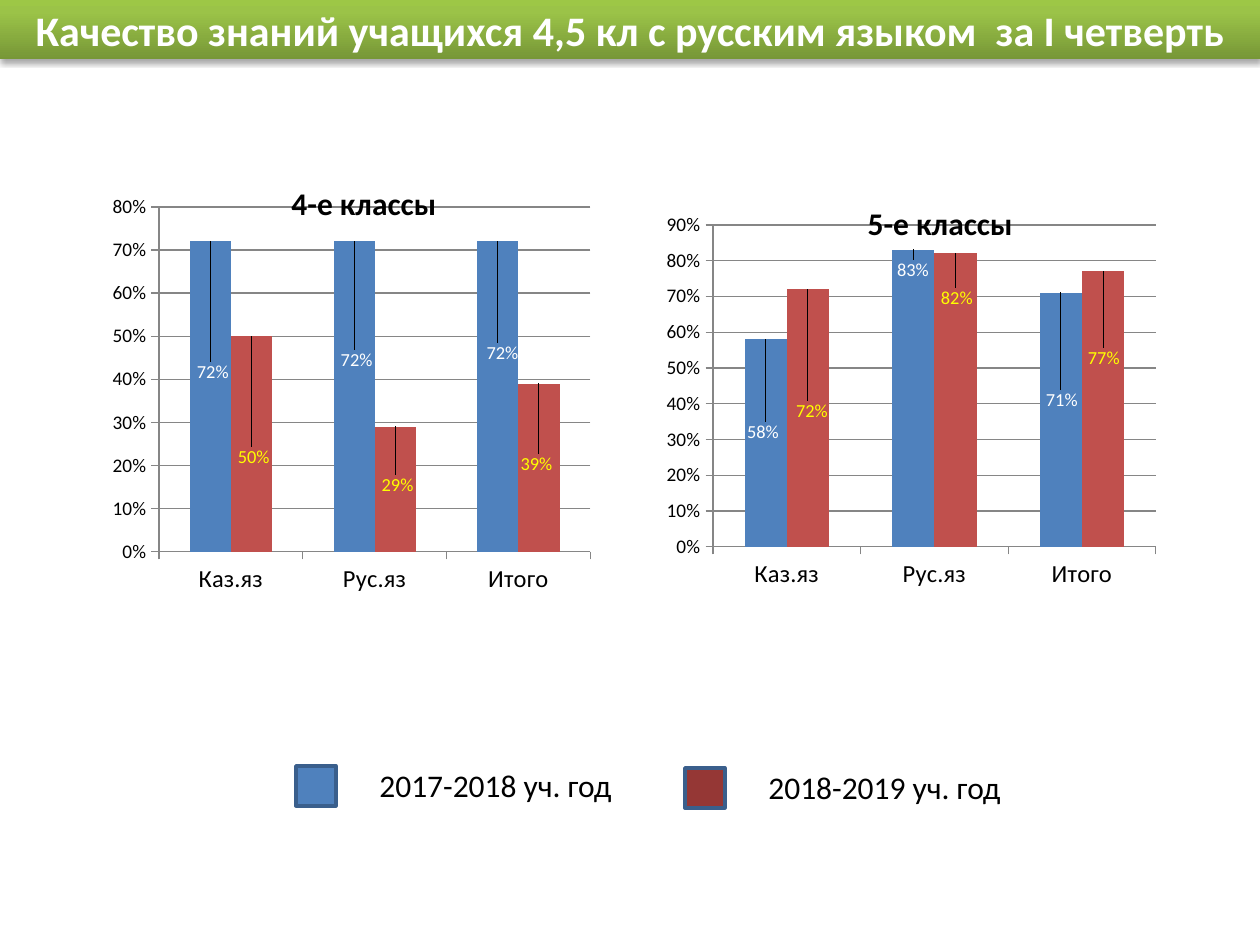
from dataclasses import dataclass

from lxml.etree import SubElement
from pptx import Presentation
from pptx.chart.data import CategoryChartData
from pptx.dml.color import RGBColor
from pptx.enum.chart import XL_CHART_TYPE as ChartType, XL_LABEL_POSITION as LabelPos
from pptx.enum.chart import XL_TICK_MARK as TickMark
from pptx.enum.shapes import MSO_SHAPE as Shape
from pptx.enum.text import MSO_ANCHOR as Anchor, MSO_AUTO_SIZE as AutoSize, PP_ALIGN as Align
from pptx.oxml import parse_xml
from pptx.oxml.ns import nsdecls, qn
from pptx.util import Emu, Pt

PX = 914400 // 126


@dataclass(frozen=True)
class Theme:
    """Colours, font and type sizes of the slide."""
    font: str = "Calibri"
    white: RGBColor = RGBColor(0xFF, 0xFF, 0xFF)
    black: RGBColor = RGBColor(0, 0, 0)
    yellow: RGBColor = RGBColor(0xFF, 0xFF, 0)
    blue: RGBColor = RGBColor(0x4F, 0x81, 0xBD)
    red: RGBColor = RGBColor(0xC0, 0x50, 0x4D)
    dark_red: RGBColor = RGBColor(0x95, 0x37, 0x35)
    outline: RGBColor = RGBColor(0x3A, 0x5F, 0x8C)
    grid: RGBColor = RGBColor(0x86, 0x86, 0x86)
    heading: float = 24
    text: float = 18
    category: float = 14
    scale: float = 11
    label: float = 10.5


T = Theme()


def style(font, size, color, bold=False):
    """Set size, colour, weight and typeface of a font."""
    font.name, font.size, font.bold = T.font, Pt(size), bold
    font.color.rgb = color


def set_layout(parent, index, **values):
    """Give a chart element a manual layout as its child at index."""
    for old in parent.findall(qn("c:layout")):
        parent.remove(old)
    layout = parse_xml(f"<c:layout {nsdecls('c')}/>")
    manual = SubElement(layout, qn("c:manualLayout"))
    for name, value in values.items():
        text = value if isinstance(value, str) else f"{value:.4f}"
        SubElement(manual, qn(f"c:{name}")).set("val", text)
    parent.insert(index, layout)


prs = Presentation()
prs.slide_width, prs.slide_height = Emu(1260 * PX), Emu(945 * PX)
s = prs.slides.add_slide(prs.slide_layouts[5])

# Heading band
title = s.shapes.title
title.left, title.top, title.width, title.height = 0, 0, Emu(1260 * PX), Emu(59 * PX)
sp_pr = title.element.spPr
sp_pr.append(parse_xml(
    f'<a:gradFill {nsdecls("a")} rotWithShape="1"><a:gsLst>'
    '<a:gs pos="0"><a:srgbClr val="779737"/></a:gs>'
    '<a:gs pos="80000"><a:srgbClr val="9BC348"/></a:gs>'
    '<a:gs pos="100000"><a:srgbClr val="9DC746"/></a:gs>'
    '</a:gsLst><a:lin ang="16200000" scaled="0"/></a:gradFill>'))
sp_pr.append(parse_xml(
    f'<a:effectLst {nsdecls("a")}><a:outerShdw blurRad="40000" dist="23000" dir="5400000" '
    'rotWithShape="0"><a:srgbClr val="000000"><a:alpha val="35000"/></a:srgbClr>'
    '</a:outerShdw></a:effectLst>'))
tf = title.text_frame
tf.auto_size, tf.vertical_anchor, tf.word_wrap = AutoSize.NONE, Anchor.MIDDLE, True
p = tf.paragraphs[0]
p.alignment = Align.CENTER
r = p.add_run()
r.text = "Качество знаний учащихся 4,5 кл с русским языком  за I четверть"
style(r.font, T.heading, T.white, bold=True)

# Charts: frame, plot area (pixels), scale maximum, title corner,
# then values and label centres of each series
categories = ["Каз.яз", "Рус.яз", "Итого"]
charts = [
    ("4-е классы", (81, 165, 510, 449), (159, 207, 432, 345), 0.8, (286, 176),
     [([0.72, 0.72, 0.72], [(213, 377), (357, 365), (503, 358)]),
      ([0.5, 0.29, 0.39], [(254, 462), (398, 490), (537, 469)])]),
    ("5-е классы", (630, 185, 552, 418), (713, 225, 443, 322), 0.9, (862, 196),
     [([0.58, 0.83, 0.71], [(763, 437), (913, 275), (1062, 405)]),
      ([0.72, 0.82, 0.77], [(812, 416), (957, 303), (1104, 363)])]),
]
GAP = 150
LABEL_RISE = 12  # from the bar top to the centre of an outside label

for name, frame, plot_area, top_value, corner, series_rows in charts:
    x, y, w, h = frame
    px, py, pw, ph = plot_area
    data = CategoryChartData(number_format="0%")
    data.categories = categories
    for number, (values, _) in enumerate(series_rows, 1):
        data.add_series(f"Series {number}", values)
    chart = s.shapes.add_chart(
        ChartType.COLUMN_CLUSTERED, *(Emu(v * PX) for v in frame), data).chart
    style(chart.font, T.text, T.black)
    chart.has_legend = False

    chart.has_title = True
    r = chart.chart_title.text_frame.paragraphs[0].add_run()
    r.text = name
    style(r.font, T.text, T.black, bold=True)
    heading = chart.element.xpath("c:chart/c:title")[0]
    heading.find(qn("c:overlay")).set("val", "1")
    set_layout(heading, 1, xMode="edge", yMode="edge",
               x=(corner[0] - x) / w, y=(corner[1] - y) / h)
    set_layout(chart.element.xpath("c:chart/c:plotArea")[0], 0,
               layoutTarget="inner", xMode="edge", yMode="edge",
               x=(px - x) / w, y=(py - y) / h, w=pw / w, h=ph / h)

    for axis, size in ((chart.category_axis, T.category), (chart.value_axis, T.scale)):
        style(axis.tick_labels.font, size, T.black)
        axis.major_tick_mark, axis.minor_tick_mark = TickMark.OUTSIDE, TickMark.NONE
        axis.format.line.color.rgb = T.grid
    axis = chart.value_axis
    axis.minimum_scale, axis.maximum_scale, axis.major_unit = 0, top_value, 0.1
    axis.tick_labels.number_format = "0%"
    axis.tick_labels.number_format_is_linked = False
    axis.has_major_gridlines = True
    axis.major_gridlines.format.line.color.rgb = T.grid

    plot = chart.plots[0]
    plot.gap_width, plot.overlap, plot.vary_by_categories = GAP, 0, False
    group = pw / len(categories)
    bar = group / (len(series_rows) + GAP / 100)
    looks = [(T.blue, T.white), (T.red, T.yellow)]
    for j, (series, (values, centres), (fill, ink)) in enumerate(
            zip(plot.series, series_rows, looks)):
        series.format.fill.solid()
        series.format.fill.fore_color.rgb = fill
        series.invert_if_negative = False
        labels = series.data_labels
        labels.show_value = True
        labels.number_format, labels.number_format_is_linked = "0%", False
        style(labels.font, T.label, ink)
        for i, (value, (cx, cy)) in enumerate(zip(values, centres)):
            label = series.points[i].data_label
            style(label.font, T.label, ink)
            label.position = LabelPos.OUTSIDE_END
            bar_x = px + group * (i + 0.5) + bar * (j - 0.5)
            label_y = py + ph * (1 - value / top_value) - LABEL_RISE
            node = labels._element.xpath(f"c:dLbl[c:idx/@val='{i}']")[0]
            set_layout(node, 1, x=(cx - bar_x) / w, y=(cy - label_y) / h)

# Legend
for x, y, color, years in ((296, 766, T.blue, "2017-2018 уч. год"),
                           (685, 768, T.dark_red, "2018-2019 уч. год")):
    key = s.shapes.add_shape(Shape.RECTANGLE, *(Emu(v * PX) for v in (x, y, 40, 40)))
    key.shadow.inherit = False
    key.fill.solid()
    key.fill.fore_color.rgb = color
    key.line.color.rgb, key.line.width = T.outline, Pt(2)
    box = s.shapes.add_textbox(*(Emu(v * PX) for v in (x + 71, y - 6, 261, 50)))
    tf = box.text_frame
    tf.word_wrap, tf.auto_size = False, AutoSize.SHAPE_TO_FIT_TEXT
    r = tf.paragraphs[0].add_run()
    r.text = years
    style(r.font, T.text, T.black)

prs.save("out.pptx")
